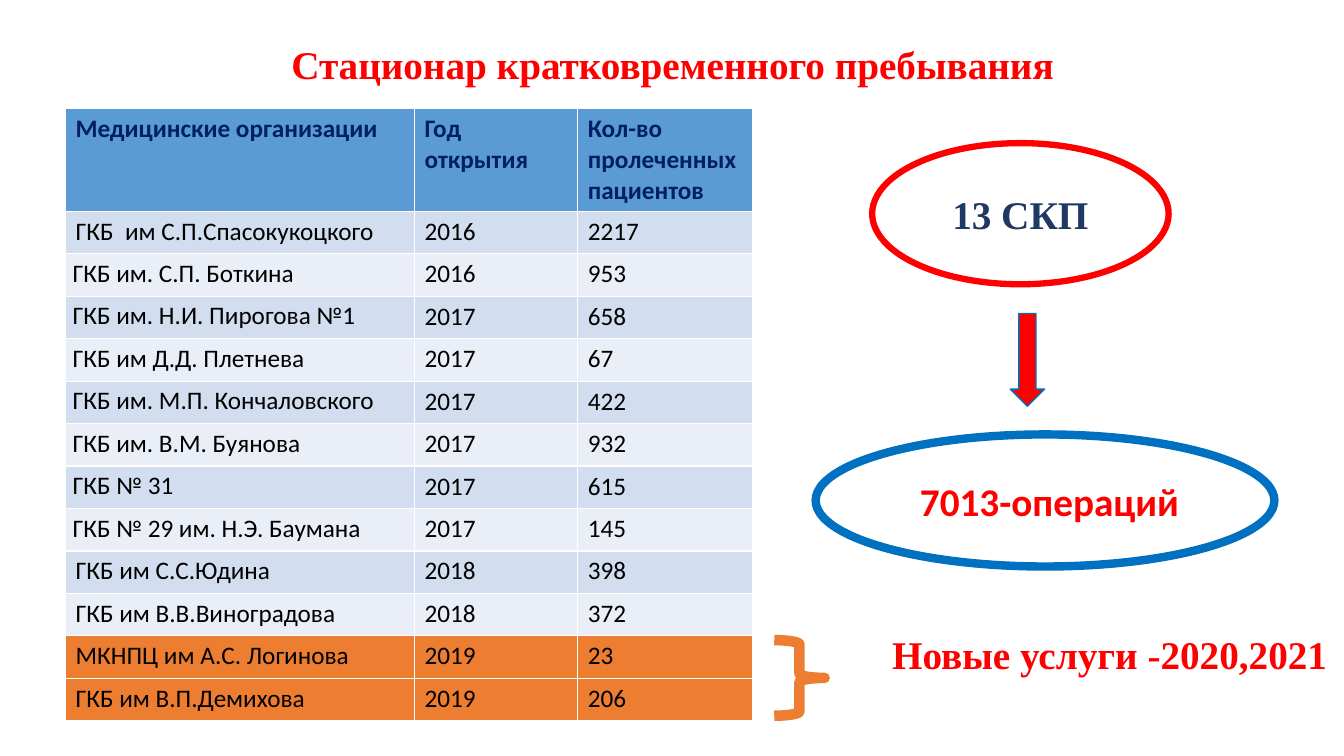
from pptx import Presentation, util as u
from pptx.dml.color import RGBColor
from pptx.enum import shapes, text

TITLE = "Стационар кратковременного пребывания"
HEAD = ("Медицинские организации", "Год открытия", "Кол-во пролеченных\nпациентов")
ROWS = [
    ("ГКБ  им С.П.Спасокукоцкого", 2016, 2217),
    ("ГКБ им. С.П. Боткина", 2016, 953),
    ("ГКБ им. Н.И. Пирогова №1", 2017, 658),
    ("ГКБ им Д.Д. Плетнева", 2017, 67),
    ("ГКБ им. М.П. Кончаловского", 2017, 422),
    ("ГКБ им. В.М. Буянова", 2017, 932),
    ("ГКБ № 31", 2017, 615),
    ("ГКБ № 29 им. Н.Э. Баумана", 2017, 145),
    ("ГКБ им С.С.Юдина", 2018, 398),
    ("ГКБ им В.В.Виноградова", 2018, 372),
    ("МКНПЦ им А.С. Логинова", 2019, 23),
    ("ГКБ им В.П.Демихова", 2019, 206),
]
TIGHT = range(2, 9)
NEW = range(11, 13)
COLS = (3.46, 1.62, 1.73)
TALL = (1, *[0.42] * len(ROWS))

THEME = dict(
    serif="Times New Roman", sans="Calibri", big=28, body=18,
    red="FF0000", navy="203864", ink="002060", black="000000", white="FFFFFF",
    blue="0070C0", head="5B9BD5", bands=("EAEFF7", "D2DEEF"), new="ED7D31",
)
T = THEME
M = shapes.MSO_SHAPE
MARKS = [
    (M.OVAL, (64.89, 18.93, 22.06, 18.67), T["white"], T["red"], 4.5,
     "13 СКП", T["serif"], T["navy"]),
    (M.DOWN_ARROW, (75.17, 41.47, 2.55, 12.27), T["red"], T["blue"], 1, "", None, None),
    (M.OVAL, (60.69, 57.47, 34.13, 17.47), T["white"], T["blue"], 6,
     " 7013-операций", T["sans"], T["red"]),
    (M.RIGHT_BRACE, (57.61, 84.67, 3.75, 10), None, T["new"], 7.5, "", None, None),
]
NOTE = "Новые услуги -2020,2021"

deck = Presentation()
deck.slide_width, deck.slide_height = u.Inches(13.33), u.Inches(7.5)
slide = deck.slides.add_slide(deck.slide_layouts[5])


def place(box):
    sides = (deck.slide_width, deck.slide_height) * 2
    return [int(share * side / 100) for share, side in zip(box, sides)]


def write(frame, words, face, size, color, bold=True):
    frame.text = words
    for para in frame.paragraphs:
        font = para.font
        font.name, font.size, font.bold = face, u.Pt(size), bold
        font.color.rgb = RGBColor.from_string(color)


def paint(fill, color):
    fill.solid()
    fill.fore_color.rgb = RGBColor.from_string(color)


title = slide.shapes.title
title.left, title.top, title.width, title.height = place((6.9, 5.33, 86.27, 7.07))
write(title.text_frame, TITLE, T["serif"], T["big"], T["red"])
title.text_frame.auto_size = text.MSO_AUTO_SIZE.NONE
title.text_frame.vertical_anchor = text.MSO_ANCHOR.MIDDLE
title.text_frame.paragraphs[0].alignment = text.PP_ALIGN.CENTER
title.text_frame.paragraphs[0].line_spacing = 0.9

box = place((4.88, 14.4, 51.09, 80.8))
table = slide.shapes.add_table(len(TALL), len(COLS), *box).table
for col, part in zip(table.columns, COLS):
    col.width = int(box[2] * part / sum(COLS))
for row, part in zip(table.rows, TALL):
    row.height = int(box[3] * part / sum(TALL))
for r, row in enumerate((HEAD, *ROWS)):
    shade = T["head"] if r == 0 else T["new"] if r in NEW else T["bands"][r % 2]
    for c, item in enumerate(row):
        cell = table.cell(r, c)
        paint(cell.fill, shade)
        write(cell.text_frame, str(item), T["sans"], T["body"],
              T["black"] if r else T["ink"], r == 0)
        if c == 0 and r in TIGHT:
            cell.margin_left = cell.margin_right = u.Inches(0.07)
            cell.margin_top = cell.margin_bottom = 0
            cell.text_frame.paragraphs[0].line_spacing = 1.15

for kind, box, fill, edge, width, words, face, color in MARKS:
    mark = slide.shapes.add_shape(kind, *place(box))
    mark.shadow.inherit = False
    if fill:
        paint(mark.fill, fill)
    else:
        mark.fill.background()
    mark.line.color.rgb = RGBColor.from_string(edge)
    mark.line.width = u.Pt(width)
    if words:
        write(mark.text_frame, words, face, T["big"], color)
        mark.text_frame.paragraphs[0].alignment = text.PP_ALIGN.CENTER

note = slide.shapes.add_textbox(*place((65.64, 82.67, 34.36, 7.6))).text_frame
note.word_wrap = True
write(note, NOTE, T["serif"], T["big"], T["red"])

deck.save("out.pptx")
